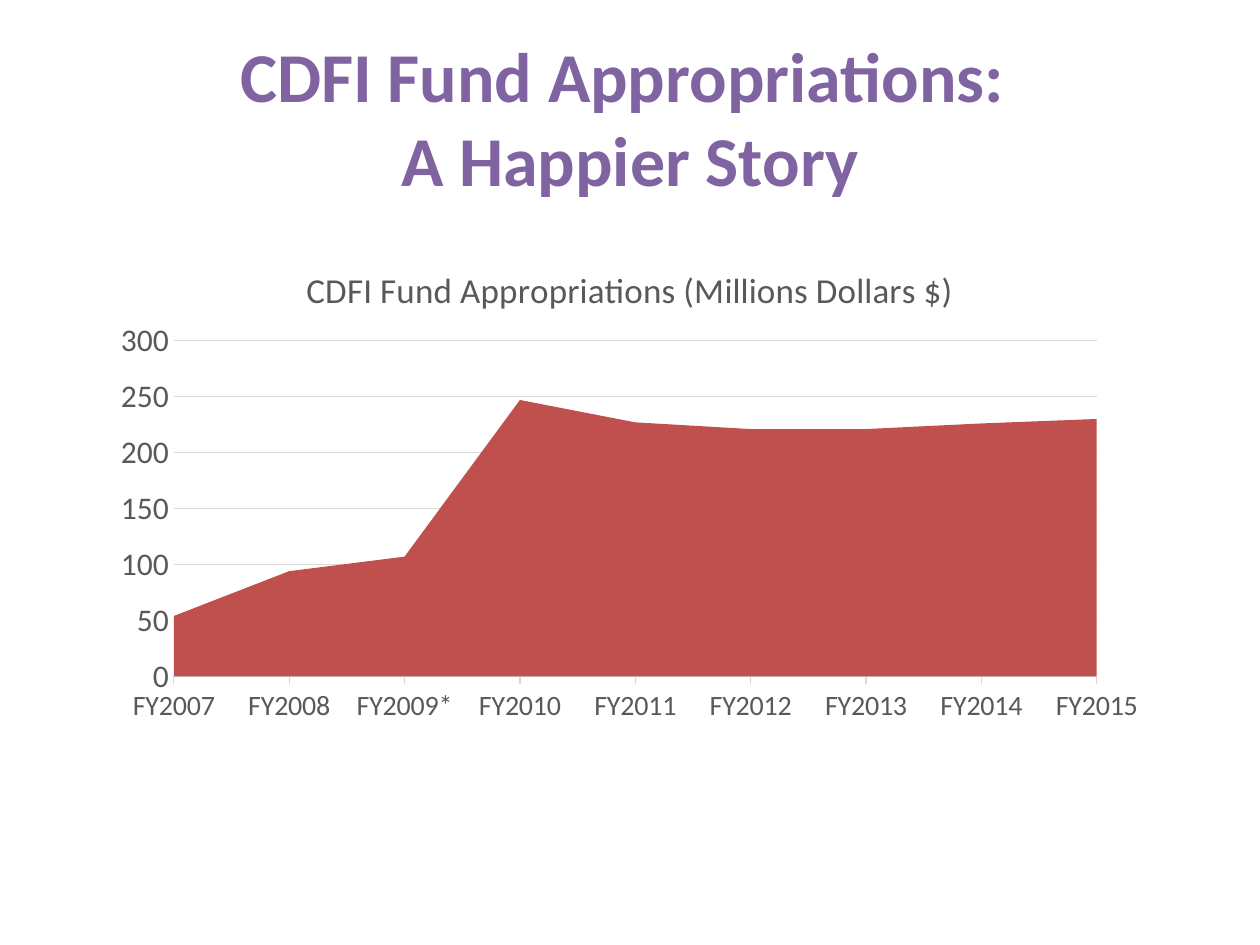
from dataclasses import dataclass

from lxml.etree import SubElement
from pptx import Presentation
from pptx.chart.data import CategoryChartData
from pptx.dml.color import RGBColor
from pptx.enum.chart import XL_CHART_TYPE, XL_TICK_MARK
from pptx.enum.text import MSO_ANCHOR, PP_ALIGN
from pptx.oxml.ns import qn
from pptx.util import Inches, Pt


@dataclass(frozen=True)
class Theme:
    font: str = "Calibri"
    heading: RGBColor = RGBColor(0x80, 0x64, 0xA2)
    area: RGBColor = RGBColor(0xC0, 0x50, 0x4D)
    label: RGBColor = RGBColor(0x59, 0x59, 0x59)
    rule: RGBColor = RGBColor(0xD9, 0xD9, 0xD9)
    heading_size: Pt = Pt(40)
    chart_title_size: Pt = Pt(20)
    amount_size: Pt = Pt(18)
    year_size: Pt = Pt(16)
    rule_width: Pt = Pt(0.75)


THEME = Theme()
HEADING_LINES = ("CDFI Fund Appropriations: ", "A Happier Story")
APPROPRIATIONS = {
    "FY2007": 54,
    "FY2008": 94,
    "FY2009*": 107,
    "FY2010": 247,
    "FY2011": 227,
    "FY2012": 221,
    "FY2013": 221,
    "FY2014": 226,
    "FY2015": 230,
}


def style_font(font, size, color, bold=False):
    font.name = THEME.font
    font.size = size
    font.bold = bold
    font.color.rgb = color


def style_rule(line):
    line.color.rgb = THEME.rule
    line.width = THEME.rule_width


def add_heading(slide):
    heading = slide.shapes.add_textbox(Inches(0.5), Inches(0.3), Inches(9), Inches(1.25))
    frame = heading.text_frame
    frame.word_wrap = True
    frame.vertical_anchor = MSO_ANCHOR.MIDDLE
    paragraph = frame.paragraphs[0]
    paragraph.alignment = PP_ALIGN.CENTER
    for index, text in enumerate(HEADING_LINES):
        if index:
            paragraph.add_line_break()
        run = paragraph.add_run()
        run.text = text
        style_font(run.font, THEME.heading_size, THEME.heading, bold=True)


def place_plot(chart, **fractions):
    plot_area = chart.plots[0]._element.getparent()
    for old_layout in plot_area.findall(qn("c:layout")):
        plot_area.remove(old_layout)
    layout = SubElement(plot_area, qn("c:layout"))
    plot_area.insert(0, layout)
    manual = SubElement(layout, qn("c:manualLayout"))
    settings = {"layoutTarget": "inner", "xMode": "edge", "yMode": "edge", **fractions}
    for name, value in settings.items():
        SubElement(manual, qn(f"c:{name}")).set("val", str(value))


def style_axes(chart):
    years, amounts = chart.category_axis, chart.value_axis
    style_font(years.tick_labels.font, THEME.year_size, THEME.label)
    years.major_tick_mark = XL_TICK_MARK.OUTSIDE
    style_rule(years.format.line)

    style_font(amounts.tick_labels.font, THEME.amount_size, THEME.label)
    amounts.major_tick_mark = XL_TICK_MARK.NONE
    amounts.minimum_scale = 0
    amounts.maximum_scale = 300
    amounts.major_unit = 50
    amounts.format.line.fill.background()
    amounts.has_major_gridlines = True
    style_rule(amounts.major_gridlines.format.line)


def add_appropriations_chart(slide):
    data = CategoryChartData()
    data.categories = list(APPROPRIATIONS)
    data.add_series("Series 1", list(APPROPRIATIONS.values()))
    chart = slide.shapes.add_chart(
        XL_CHART_TYPE.AREA, Inches(0.79), Inches(1.92), Inches(8.42), Inches(3.92), data
    ).chart
    chart.has_legend = False
    chart.font.name = THEME.font
    chart.has_title = True
    title = chart.chart_title.text_frame.paragraphs[0].add_run()
    title.text = "CDFI Fund Appropriations (Millions Dollars $)"
    style_font(title.font, THEME.chart_title_size, THEME.label)

    plot = chart.plots[0]
    plot.vary_by_categories = False
    fill = plot.series[0].format.fill
    fill.solid()
    fill.fore_color.rgb = THEME.area
    style_axes(chart)
    place_plot(chart, x=0.07, y=0.2, w=0.87, h=0.68)


def main():
    presentation = Presentation()
    presentation.slide_width = Inches(10)
    presentation.slide_height = Inches(7.5)
    slide = presentation.slides.add_slide(presentation.slide_layouts[6])
    add_heading(slide)
    add_appropriations_chart(slide)
    presentation.save("out.pptx")


if __name__ == "__main__":
    main()
